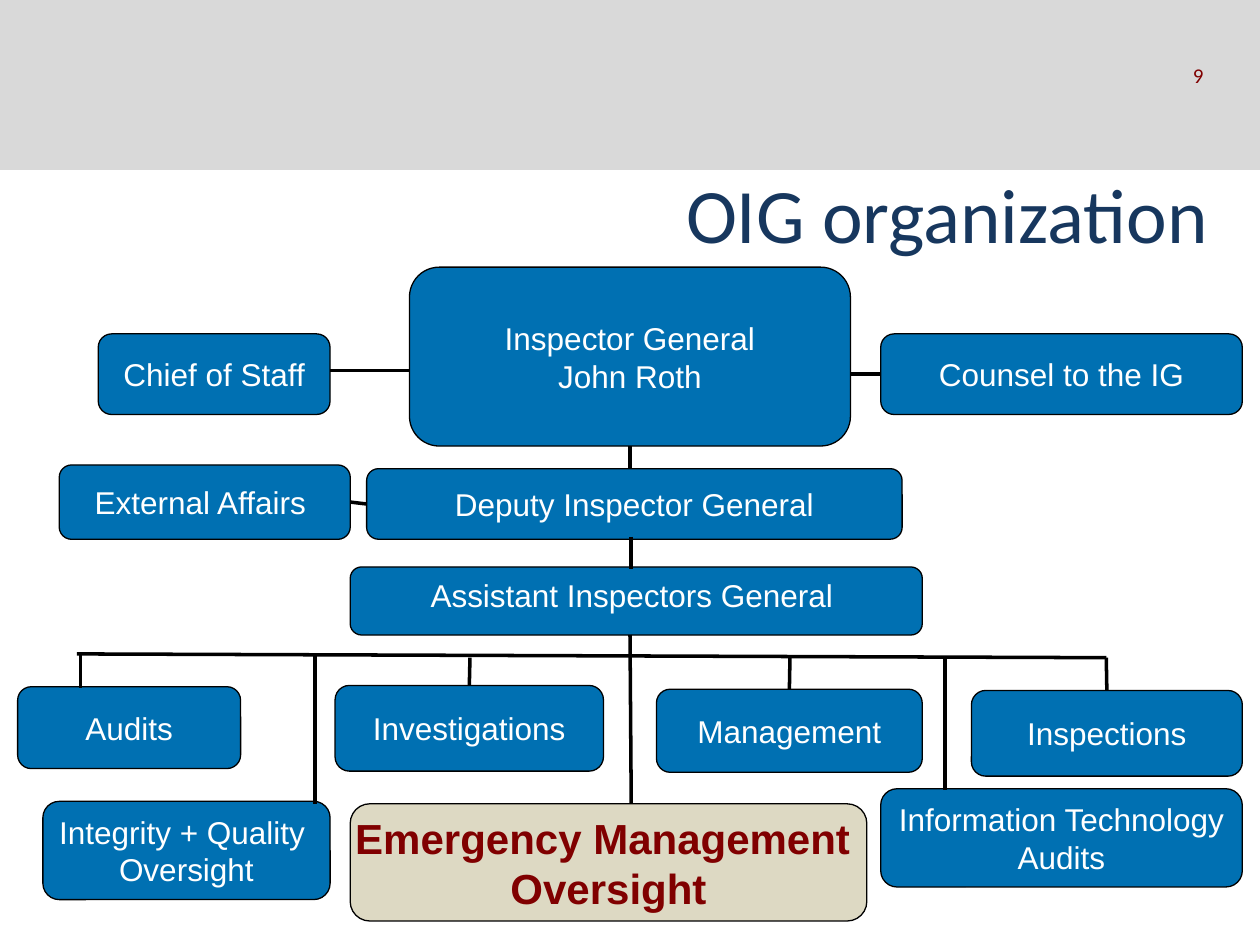
"""Build the OIG organization chart slide."""
from pptx import Presentation
from pptx.dml.color import RGBColor
from pptx.enum.shapes import MSO_CONNECTOR, MSO_SHAPE
from pptx.enum.text import MSO_ANCHOR, PP_ALIGN
from pptx.oxml.ns import qn
from pptx.util import Inches, Pt

RECTANGLE, ROUNDED = MSO_SHAPE.RECTANGLE, MSO_SHAPE.ROUNDED_RECTANGLE
STRAIGHT = MSO_CONNECTOR.STRAIGHT
TOP, MIDDLE = MSO_ANCHOR.TOP, MSO_ANCHOR.MIDDLE
CENTER, RIGHT = PP_ALIGN.CENTER, PP_ALIGN.RIGHT
TOP_SIDE, LEFT_SIDE, BOTTOM_SIDE, RIGHT_SIDE = range(4)
COLUMNS, ROWS = 100, 75
CELL = Inches(0.1)
COLORS = {
    "band": "D9D9D9",
    "white": "FFFFFF",
    "navy": "17375E",
    "maroon": "800000",
    "blue": "0070B2",
    "tan": "DDD9C3",
    "black": "000000",
}
PANELS = [
    ((0, 0, COLUMNS, ROWS), "band"),
    ((0, 13.5, COLUMNS, 54.1), "white"),
    ((0, 65.3, COLUMNS, 9.7), "white"),
]
OFFICES = {
    "general": ("Inspector General\nJohn Roth", (32.5, 21.2, 35, 14.2)),
    "technology": (" Information Technology \nAudits", (69.9, 62.6, 28.7, 7.8)),
    "counsel": ("Counsel to the IG", (69.9, 26.5, 28.7, 6.4)),
    "inspections": ("Inspections", (77.1, 54.8, 21.5, 6.8)),
    "audits": ("Audits", (1.4, 54.5, 17.7, 6.5)),
    "investigations": ("Investigations", (26.6, 54.4, 21.3, 6.8)),
    "management": ("Management", (52.1, 54.7, 21.1, 6.6)),
    "chief": ("Chief of Staff", (7.8, 26.5, 18.4, 6.4)),
    "external": ("External Affairs ", (4.7, 36.9, 23.1, 5.9)),
    "deputy": ("Deputy Inspector General", (29.1, 37.2, 42.5, 5.6)),
    "integrity": ("Integrity + Quality \nOversight", (3.4, 63.6, 22.8, 7.8)),
}
LINES = [
    ((6.1, 51.9), (87.8, 52.2)),
    ((32.5, 29.4), (26.2, 29.4)),
    ((75, 52.3), (75, 62.7)),
    ((25, 52.1), (25, 63.8)),
    ((50, 50.4), (50.1, 63.8)),
    ((6.4, 52), (6.4, 54.6)),
    ((50.1, 42.6), (50.1, 45.2)),
]
JOINED_LINES = [
    ((67.5, 29.7), "counsel", LEFT_SIDE),
    ((50, 37.2), "general", BOTTOM_SIDE),
    ((37.3, 52.2), "investigations", TOP_SIDE),
    ((62.7, 52.2), "management", TOP_SIDE),
    ((87.8, 52.2), "inspections", TOP_SIDE),
]


def color(name):
    """Return the named palette color."""
    return RGBColor.from_string(COLORS[name])


def grid(*cells):
    """Convert grid cells to slide lengths."""
    return [round(cell * CELL) for cell in cells]


def format_text(shape, size, font, ink, align, anchor=MIDDLE, bold=False):
    """Style all the text of a shape."""
    shape.text_frame.vertical_anchor = anchor
    for paragraph in shape.text_frame.paragraphs:
        paragraph.alignment = align
        for run in paragraph.runs:
            run.font.size = Pt(size)
            run.font.name = font
            run.font.bold = bold
            run.font.color.rgb = color(ink)


def add_filled(slide, kind, place, fill):
    """Add a flat filled shape without a line."""
    shape = slide.shapes.add_shape(kind, *grid(*place))
    shape.shadow.inherit = False
    shape.fill.solid()
    shape.fill.fore_color.rgb = color(fill)
    shape.line.fill.background()
    return shape


def add_office(slide, text, place, fill="blue", ink="white", size=18,
               anchor=MIDDLE, bold=False):
    """Add one outlined box of the chart."""
    shape = add_filled(slide, ROUNDED, place, fill)
    shape.line.fill.solid()
    shape.line.fill.fore_color.rgb = color("black")
    shape.line.width = Pt(0.75)
    shape.text_frame.text = text
    shape.text_frame.word_wrap = False
    format_text(shape, size, "Arial", ink, CENTER, anchor, bold)
    return shape


def add_line(slide, start, end):
    """Add a black line between two grid points."""
    line = slide.shapes.add_connector(STRAIGHT, *grid(*start, *end))
    line.line.width = Pt(2)
    line.line.color.rgb = color("black")
    properties = line.element.spPr
    properties.append(properties.makeelement(qn("a:effectLst"), {}))
    return line


def add_title(slide):
    """Fill the title and place it in front of the panels."""
    title = slide.shapes.title
    title.left, title.top, title.width, title.height = grid(6.9, 11.9, 90, 9.9)
    title.text_frame.text = "OIG organization"
    format_text(title, 44, "Calibri", "navy", RIGHT)
    title.element.getparent().append(title.element)


def add_page_number(slide):
    """Add the page number in the top band."""
    box = slide.shapes.add_textbox(*grid(85.3, 2.1, 11.2, 7.7))
    box.text_frame.text = "9"
    box.text_frame.word_wrap = True
    format_text(box, 12, "Calibri", "maroon", RIGHT)


def add_lines(slide, offices):
    """Connect the offices."""
    for start, end in LINES:
        add_line(slide, start, end)
    for start, name, side in JOINED_LINES:
        add_line(slide, start, start).end_connect(offices[name], side)
    link = add_line(slide, (29.1, 40), (27.8, 39.8))
    link.begin_connect(offices["deputy"], LEFT_SIDE)
    link.end_connect(offices["external"], RIGHT_SIDE)


def main():
    """Build and save the slide."""
    presentation = Presentation()
    presentation.slide_width, presentation.slide_height = grid(COLUMNS, ROWS)
    slide = presentation.slides.add_slide(presentation.slide_layouts[5])
    for place, fill in PANELS:
        add_filled(slide, RECTANGLE, place, fill)
    add_title(slide)
    add_page_number(slide)
    offices = {name: add_office(slide, *office) for name, office in OFFICES.items()}
    add_office(slide, "Assistant Inspectors General ", (27.8, 45, 45.4, 5.4), anchor=TOP)
    add_office(slide, "Emergency Management \nOversight", (27.8, 63.8, 41, 9.3),
               "tan", "maroon", 24, bold=True)
    add_lines(slide, offices)
    presentation.save("out.pptx")


if __name__ == "__main__":
    main()
